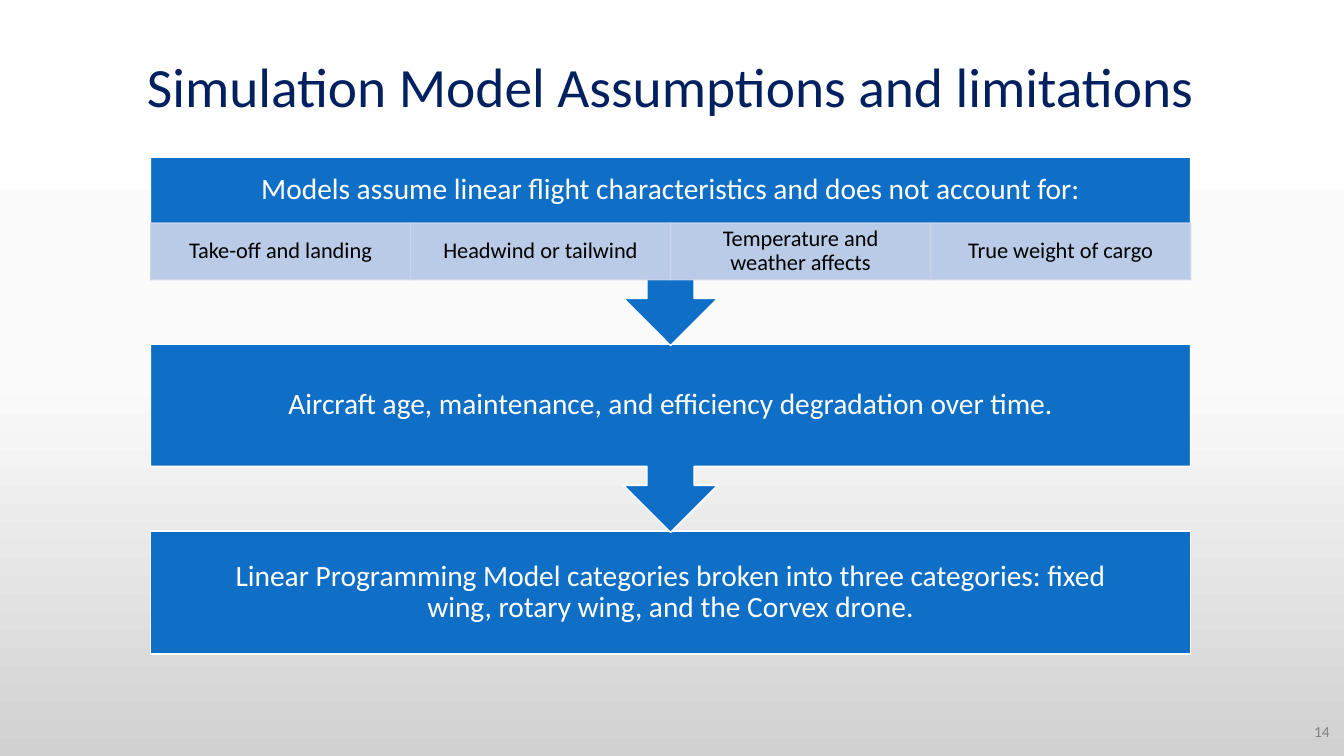
from copy import deepcopy

from pptx import Presentation
from pptx.dml.color import RGBColor
from pptx.enum.shapes import MSO_SHAPE as Shape
from pptx.enum.text import MSO_ANCHOR as Anchor, PP_ALIGN as Align
from pptx.oxml.ns import qn
from pptx.oxml.xmlchemy import OxmlElement as new_element
from pptx.util import Pt

BLUE, PALE, WHITE = "0F6FC6", "CCD5EA", "FFFFFF"
WIDE = (11.5, 11.5, 11.5, 11.5)
NARROW = (40, 11.5, 40, 11.5)
TIGHT = (10, 1.5, 10, 1.5)
STANDARD = (7.2, 3.6, 7.2, 3.6)


def color(value):
    return RGBColor.from_string(value)


def set_all(target, values):
    for name, value in values.items():
        setattr(target, name, value)


def write(shape, text, size, ink, margins=STANDARD, align=Align.CENTER, spacing=0.9):
    frame = shape.text_frame
    left, top, right, bottom = map(Pt, margins)
    set_all(frame, {"word_wrap": True, "vertical_anchor": Anchor.MIDDLE,
                    "margin_left": left, "margin_top": top,
                    "margin_right": right, "margin_bottom": bottom})
    para = frame.paragraphs[0]
    set_all(para, {"alignment": align, "line_spacing": spacing})
    span = para.add_run()
    span.text = text
    set_all(span.font, {"name": "Calibri", "size": Pt(size)})
    span.font.color.rgb = color(ink)


def add_text(page, box, text, size, ink, **layout):
    write(page.shapes.add_textbox(*map(Pt, box)), text, size, ink, **layout)


def add_block(page, kind, box, fill, line, alpha=None):
    shape = page.shapes.add_shape(kind, *map(Pt, box))
    shape.shadow.inherit = False
    shape.fill.solid()
    shape.fill.fore_color.rgb = color(fill)
    shape.line.color.rgb = color(line)
    shape.line.width = Pt(1)
    if alpha:
        for tone in shape.element.spPr.iter(qn("a:srgbClr")):
            opacity = new_element("a:alpha")
            opacity.set("val", str(alpha * 1000))
            tone.append(opacity)
    return shape


def add_background(page):
    fill = page.background.fill
    fill.gradient()
    fill.gradient_angle = 270
    stops = next(page.element.iter(qn("a:gsLst")))
    stops.insert(1, deepcopy(stops[0]))
    for stop, place, tone in zip(fill.gradient_stops, (0, 0.5, 1),
                                 (WHITE, "FBFBFB", "D1D1D1")):
        stop.position = place
        stop.color.rgb = color(tone)


def add_factors(page, box, factors):
    left, top, width, height = box
    cell = width / len(factors)
    for index, factor in enumerate(factors):
        block = add_block(page, Shape.RECTANGLE, (left + index * cell, top, cell, height),
                          PALE, PALE, alpha=90)
        write(block, factor, 16, "000000", margins=TIGHT)


def add_flow(page, box, heading, factors, middle, last):
    left, top, width, height = box
    step, callout, body = height * 0.376, height * 0.379, height * 0.248
    heading_height, factor_height = body * 0.54, body * 0.46

    # Final step lies at the back so the arrow tips overlap it
    block = add_block(page, Shape.RECTANGLE, (left, top + 2 * step, width, body), BLUE, WHITE)
    write(block, last, 21, WHITE, margins=NARROW)

    # Steps that point down to the next one
    low_margin = WIDE[3] + factor_height
    for index, text, margins in ((1, middle, WIDE),
                                 (0, heading, (*WIDE[:3], low_margin))):
        block = add_block(page, Shape.DOWN_ARROW_CALLOUT,
                          (left, top + index * step, width, callout), BLUE, WHITE)
        write(block, text, 21, WHITE, margins=margins)

    # Row of factors under the heading
    add_factors(page, (left, top + heading_height - 0.5, width, factor_height), factors)


def build_page(deck):
    page = deck.slides.add_slide(deck.slide_layouts[6])
    add_background(page)
    add_text(page, (70.5, 23, 816.5, 81.4), "Simulation Model Assumptions and limitations",
             39.6, "002060")
    add_flow(page, (107.5, 112.3, 743, 355),
             "Models assume linear flight characteristics and does not account for:",
             ("Take-off and landing", "Headwind or tailwind",
              "Temperature and weather affects", "True weight of cargo"),
             "Aircraft age, maintenance, and efficiency degradation over time.",
             "Linear Programming Model categories broken into three categories: "
             "fixed wing, rotary wing, and the Corvex drone.")
    # Page number
    add_text(page, (921.6, 508.3, 35.3, 28.8), "14", 11, "808080",
             align=Align.RIGHT, spacing=1.0)


def main():
    deck = Presentation()
    set_all(deck, {"slide_width": Pt(960), "slide_height": Pt(540)})
    build_page(deck)
    deck.save("out.pptx")


if __name__ == "__main__":
    main()
